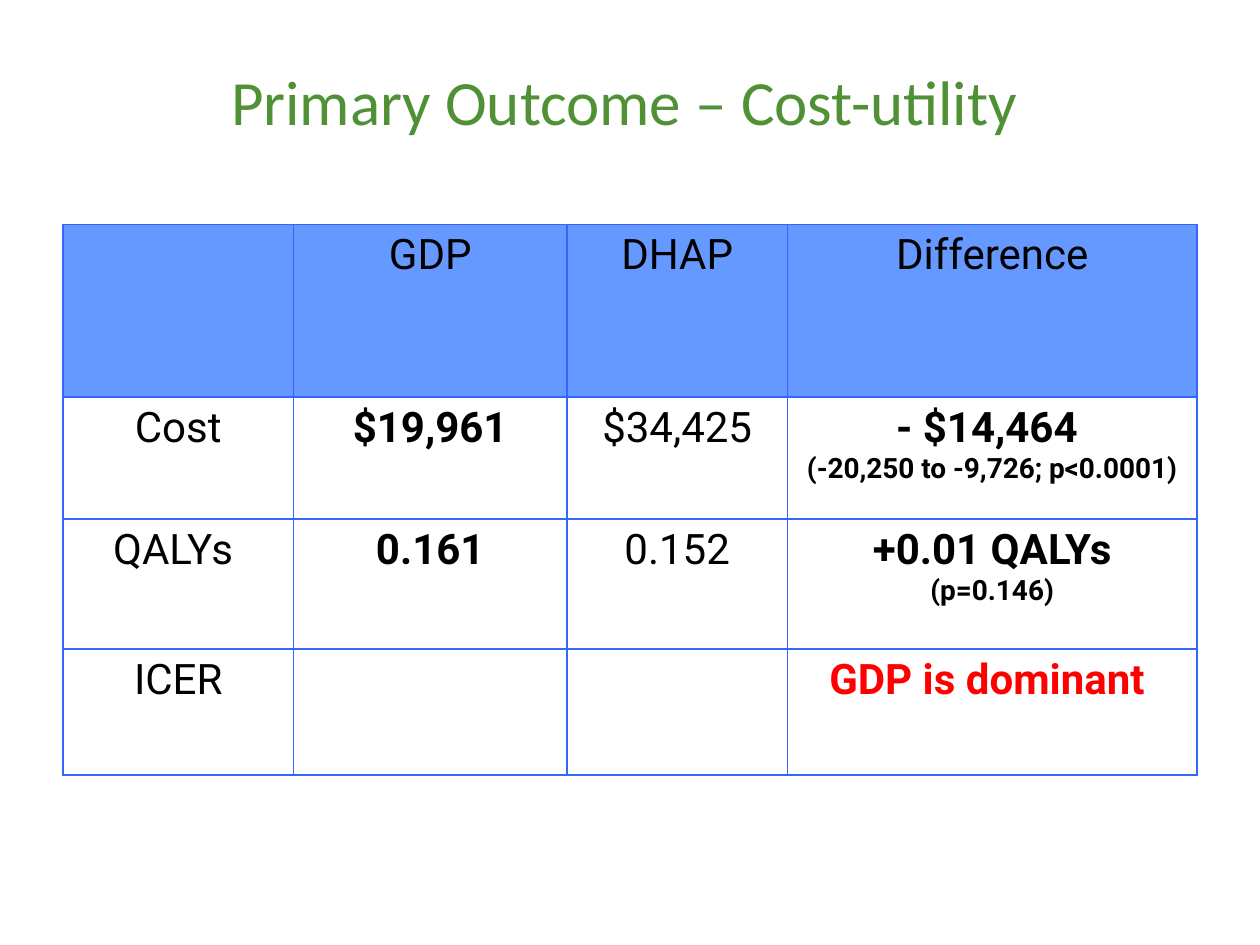
from dataclasses import dataclass

from lxml.etree import SubElement
from pptx import Presentation
from pptx.dml.color import RGBColor
from pptx.enum.text import MSO_ANCHOR, PP_ALIGN
from pptx.oxml.ns import qn
from pptx.util import Inches, Pt


@dataclass(frozen=True)
class Theme:
    title_font: str = "Calibri"
    table_font: str = "Roboto"
    title_color: str = "519136"
    text_color: str = "000000"
    accent_color: str = "FF0000"
    header_fill: str = "6699FF"
    body_fill: str = "FFFFFF"
    border_color: str = "3366FF"
    title_size: int = 36
    cell_size: int = 24
    detail_size: int = 16
    border_width: int = 1


class SlideBuilder:
    def __init__(self, slide, theme):
        self.slide = slide
        self.theme = theme

    def style_para(self, para, font_name, size, color, bold=False):
        para.alignment = PP_ALIGN.CENTER
        for span in para.runs:
            span.font.name = font_name
            span.font.size = Pt(size)
            span.font.bold = bold
            span.font.color.rgb = RGBColor.from_string(color)

    def add_title(self, text, left, top, width, height):
        box = self.slide.shapes.title
        box.left, box.top = Inches(left), Inches(top)
        box.width, box.height = Inches(width), Inches(height)
        frame = box.text_frame
        frame.text = text
        frame.vertical_anchor = MSO_ANCHOR.MIDDLE
        theme = self.theme
        self.style_para(frame.paragraphs[0], theme.title_font, theme.title_size, theme.title_color)

    def add_borders(self, cell):
        properties = cell._tc.get_or_add_tcPr()
        for side in ("a:lnL", "a:lnR", "a:lnT", "a:lnB"):
            line = SubElement(properties, qn(side), w=str(Pt(self.theme.border_width)))
            fill = SubElement(line, qn("a:solidFill"))
            SubElement(fill, qn("a:srgbClr"), val=self.theme.border_color)

    def fill_cell(self, cell, text, fill, color, bold):
        self.add_borders(cell)
        cell.fill.solid()
        cell.fill.fore_color.rgb = RGBColor.from_string(fill)
        cell.text_frame.text = text
        theme = self.theme
        for index, para in enumerate(cell.text_frame.paragraphs):
            size = theme.detail_size if index else theme.cell_size
            self.style_para(para, theme.table_font, size, color, bold)

    def add_table(self, rows, left, top, column_widths, row_heights, bold_columns, accent_cell):
        frame = self.slide.shapes.add_table(
            len(rows), len(column_widths), Inches(left), Inches(top),
            Inches(sum(column_widths)), Inches(sum(row_heights)))
        table = frame.table
        for column, width in zip(table.columns, column_widths):
            column.width = Inches(width)
        for row, height in zip(table.rows, row_heights):
            row.height = Inches(height)
        theme = self.theme
        for row_index, row in enumerate(rows):
            fill = theme.body_fill if row_index else theme.header_fill
            for column_index, text in enumerate(row):
                bold = row_index > 0 and column_index in bold_columns
                accented = (row_index, column_index) == accent_cell
                color = theme.accent_color if accented else theme.text_color
                self.fill_cell(table.cell(row_index, column_index), text, fill, color, bold)


def main():
    deck = Presentation()
    deck.slide_width, deck.slide_height = Inches(10), Inches(7.5)
    title_only = deck.slide_layouts[5]
    builder = SlideBuilder(deck.slides.add_slide(title_only), Theme())
    builder.add_title("Primary Outcome – Cost-utility", 0.33, 0.36, 9.25, 0.87)
    outcomes = [
        ["", "GDP", "DHAP", "Difference"],
        ["Cost", "$19,961", "$34,425", "- $14,464 \n(-20,250 to -9,726; p<0.0001)"],
        ["QALYs ", "0.161", "0.152", "+0.01 QALYs\n(p=0.146)"],
        ["ICER", "", "", "GDP is dominant "],
    ]
    builder.add_table(
        outcomes, left=0.5, top=1.78,
        column_widths=[1.83, 2.17, 1.75, 3.25],
        row_heights=[1.37, 0.97, 1.03, 1],
        bold_columns={1, 3}, accent_cell=(3, 3))
    deck.save("out.pptx")


if __name__ == "__main__":
    main()
